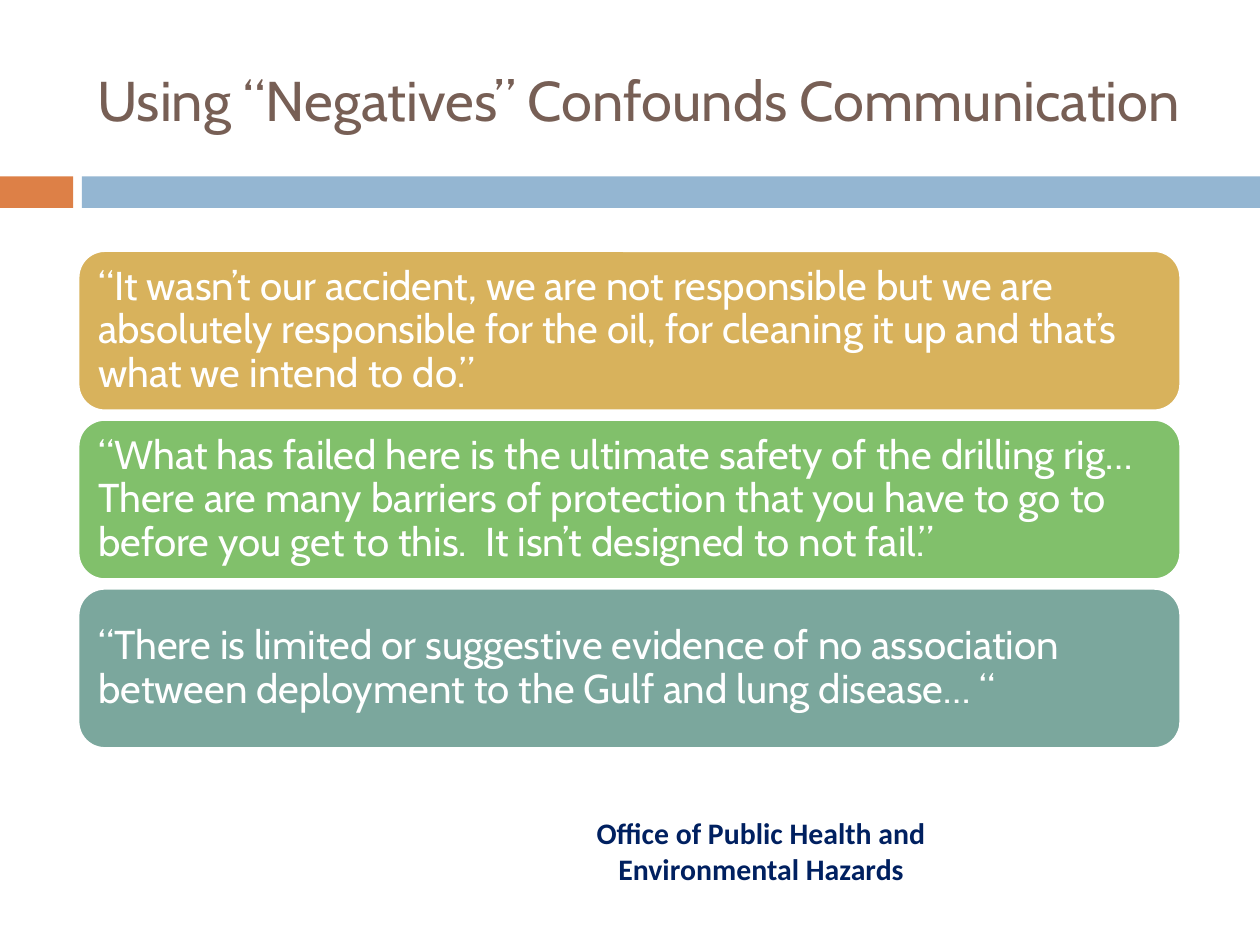
from dataclasses import dataclass

from pptx import Presentation
from pptx.dml.color import RGBColor
from pptx.enum.shapes import MSO_SHAPE
from pptx.enum.text import MSO_ANCHOR, PP_ALIGN
from pptx.util import Inches, Pt

RECTANGLE = MSO_SHAPE.RECTANGLE
ROUNDED = MSO_SHAPE.ROUNDED_RECTANGLE
LEFT, CENTER = PP_ALIGN.LEFT, PP_ALIGN.CENTER
TOP, MIDDLE = MSO_ANCHOR.TOP, MSO_ANCHOR.MIDDLE
TITLE_ONLY = 5


@dataclass(frozen=True)
class Theme:
    heading: str = "775F55"
    white: str = "FFFFFF"
    navy: str = "002060"
    orange: str = "DD8047"
    blue: str = "94B6D2"
    gold: str = "D8B25C"
    green: str = "81C06B"
    teal: str = "7BA79D"
    body_font: str = "Cabin"
    office_font: str = "Calibri"
    title_size: int = 32
    quote_size: int = 23
    office_size: int = 17
    outline: float = 1.5


def write_text(frame, text, *, size, font, color, bold=False, align=LEFT,
               anchor=MIDDLE, line_spacing=None, inset=None):
    """Fill a text frame with one formatted paragraph."""
    frame.word_wrap = True
    frame.vertical_anchor = anchor
    if inset is not None:
        frame.margin_left = frame.margin_right = Inches(inset)
        frame.margin_top = frame.margin_bottom = Inches(inset)
    paragraph = frame.paragraphs[0]
    paragraph.alignment = align
    if line_spacing is not None:
        paragraph.line_spacing = line_spacing
    run = paragraph.add_run()
    run.text = text
    run.font.size = Pt(size)
    run.font.name = font
    run.font.bold = bold
    run.font.color.rgb = RGBColor.from_string(color)


class SlideBuilder:
    """Holds the theme and the slide being built."""

    def __init__(self, slide, theme):
        self.slide = slide
        self.theme = theme

    def title(self, text, left, top, width, height):
        heading = self.slide.shapes.title
        heading.left, heading.top = Inches(left), Inches(top)
        heading.width, heading.height = Inches(width), Inches(height)
        write_text(heading.text_frame, text, size=self.theme.title_size,
                   font=self.theme.body_font, color=self.theme.heading)

    def block(self, preset, color, left, top, width, height):
        block = self.slide.shapes.add_shape(
            preset, Inches(left), Inches(top), Inches(width), Inches(height))
        block.shadow.inherit = False
        block.fill.solid()
        block.fill.fore_color.rgb = RGBColor.from_string(color)
        block.line.fill.background()
        return block

    def quote(self, text, color, left, top, width, height):
        panel = self.block(ROUNDED, color, left, top, width, height)
        panel.line.color.rgb = RGBColor.from_string(self.theme.white)
        panel.line.width = Pt(self.theme.outline)
        write_text(panel.text_frame, text, size=self.theme.quote_size,
                   font=self.theme.body_font, color=self.theme.white,
                   line_spacing=0.9, inset=0.1)

    def office(self, text, left, top, width, height):
        label = self.slide.shapes.add_textbox(
            Inches(left), Inches(top), Inches(width), Inches(height))
        write_text(label.text_frame, text, size=self.theme.office_size,
                   font=self.theme.office_font, color=self.theme.navy,
                   bold=True, align=CENTER, anchor=TOP)


def main():
    theme = Theme()
    deck = Presentation()
    deck.slide_width, deck.slide_height = Inches(10), Inches(7.5)
    slide = deck.slides.add_slide(deck.slide_layouts[TITLE_ONLY])
    builder = SlideBuilder(slide, theme)

    # Divider band under the title
    builder.block(RECTANGLE, theme.orange, 0, 1.4, 0.58, 0.25)
    builder.block(RECTANGLE, theme.blue, 0.65, 1.4, 9.35, 0.25)

    # Office name and title
    builder.office("Office of Public Health and Environmental Hazards",
                   4.58, 6.42, 2.92, 0.67)
    builder.title("Using “Negatives” Confounds Communication",
                  0.67, 0.25, 8.92, 1.08)

    # Stack of quotations
    quotes = [
        ("“It wasn’t our accident, we are not responsible but we are "
         "absolutely responsible for the oil, for cleaning it up and that’s "
         "what we intend to do.”", theme.gold),
        ("“What has failed here is the ultimate safety of the drilling rig…"
         "There are many barriers of protection that you have to go to "
         "before you get to this.  It isn’t designed to not fail.”",
         theme.green),
        ("“There is limited or suggestive evidence of no association "
         "between deployment to the Gulf and lung disease… “", theme.teal),
    ]
    first_top, height, gap = 1.99, 1.27, 0.07
    for row, (text, color) in enumerate(quotes):
        builder.quote(text, color, 0.62, first_top + row * (height + gap),
                      8.75, height)

    deck.save("out.pptx")


if __name__ == "__main__":
    main()
